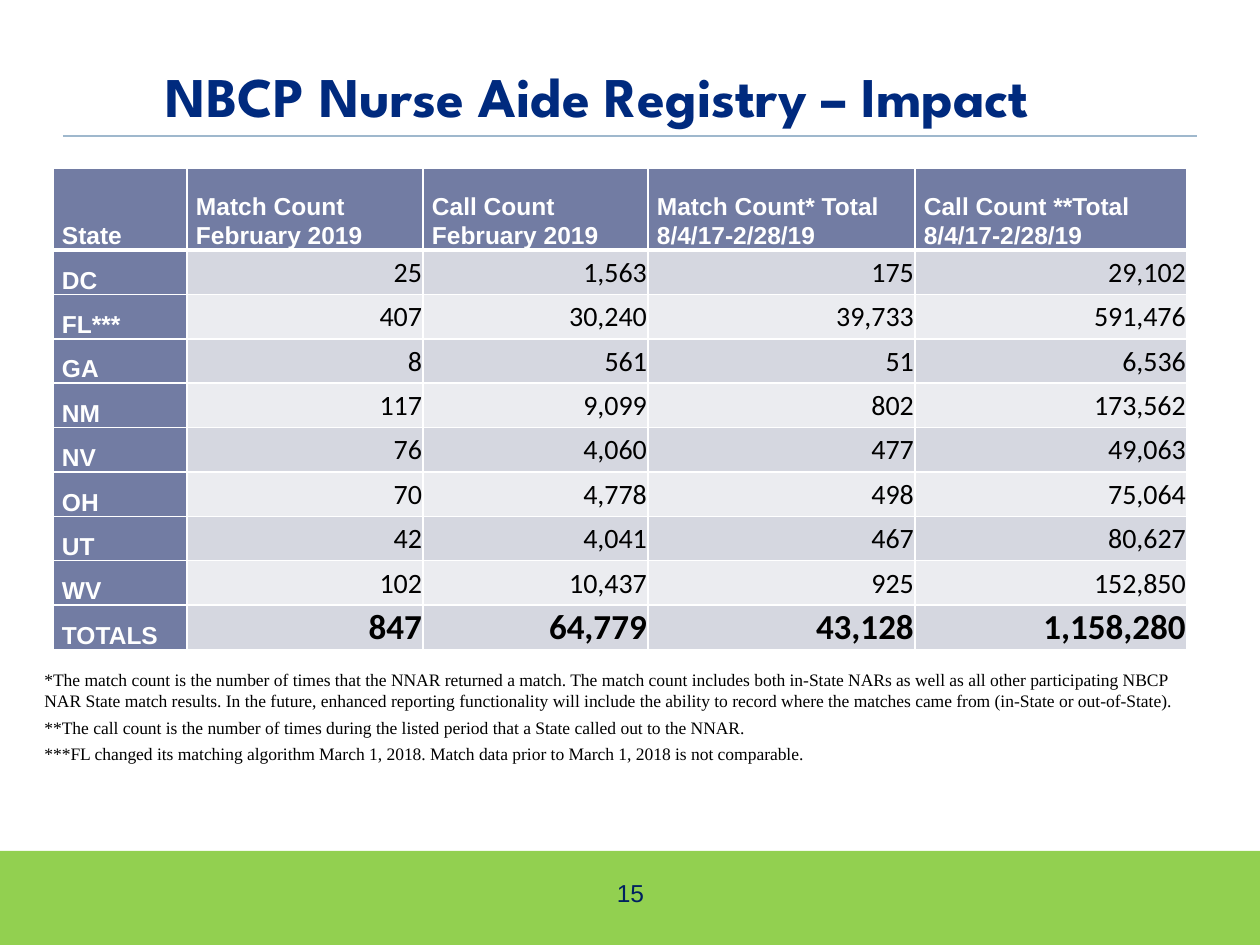
from lxml.etree import SubElement
from pptx import Presentation
from pptx.dml.color import RGBColor
from pptx.enum.shapes import MSO_CONNECTOR, MSO_SHAPE
from pptx.enum.text import MSO_ANCHOR as Anchor, PP_ALIGN as Align
from pptx.oxml.ns import qn
from pptx.util import Emu, Pt

PX = 914400 // 126

TITLE = "NBCP Nurse Aide Registry – Impact"
PAGE_NUMBER = "15"
HEADERS = ["State", "Match Count February 2019", "Call Count February 2019",
           "Match Count* Total 8/4/17-2/28/19", "Call Count **Total 8/4/17-2/28/19"]
STATES = [
    ("DC", "25", "1,563", "175", "29,102"),
    ("FL***", "407", "30,240", "39,733", "591,476"),
    ("GA", "8", "561", "51", "6,536"),
    ("NM", "117", "9,099", "802", "173,562"),
    ("NV", "76", "4,060", "477", "49,063"),
    ("OH", "70", "4,778", "498", "75,064"),
    ("UT", "42", "4,041", "467", "80,627"),
    ("WV", "102", "10,437", "925", "152,850"),
    ("TOTALS", "847", "64,779", "43,128", "1,158,280"),
]
FOOTNOTES = [
    "*The match count is the number of times that the NNAR returned a match. "
    "The match count includes both in-State NARs as well as all other participating "
    "NBCP NAR State match results. In the future, enhanced reporting functionality "
    "will include the ability to record where the matches came from "
    "(in-State or out-of-State).",
    "**The call count is the number of times during the listed period "
    "that a State called out to the NNAR.",
    "***FL changed its matching algorithm March 1, 2018. "
    "Match data prior to March 1, 2018 is not comparable.",
]

TABLE_LEFT, TABLE_TOP, TABLE_HEIGHT = 53, 168, 482
HEADER_HEIGHT = 82
COLUMN_WIDTHS = [134, 236, 225, 267, 272]
LABEL_FILL, BAND_FILLS = "727CA3", ("D5D7E0", "EBECF0")
WHITE, BLACK = "FFFFFF", "000000"


def px(count):
    return Emu(round(count * PX))


def color(value):
    return RGBColor.from_string(value)


def add_run(para, text, font, size, ink, bold=False):
    span = para.add_run()
    span.text = text
    span.font.name, span.font.size, span.font.bold = font, Pt(size), bold
    span.font.color.rgb = color(ink)


def add_text(slide, place, texts, font, size, ink, bold=False, align=Align.LEFT,
             anchor=Anchor.TOP, space_after=0):
    box = slide.shapes.add_textbox(*map(px, place))
    frame = box.text_frame
    frame.word_wrap = True
    frame.vertical_anchor = anchor
    for index, text in enumerate(texts):
        para = frame.add_paragraph() if index else frame.paragraphs[0]
        para.alignment = align
        para.space_after = Pt(space_after)
        add_run(para, text, font, size, ink, bold)


def set_borders(cell, top, bottom):
    """Give the cell white borders; top and bottom are widths in points."""
    properties = cell._tc.get_or_add_tcPr()
    for side, width in (("L", 1), ("R", 1), ("T", top), ("B", bottom)):
        line = SubElement(properties, qn(f"a:ln{side}"), w=str(Pt(width)))
        SubElement(SubElement(line, qn("a:solidFill")), qn("a:srgbClr"), val=WHITE)


def fill_cell(cell, text, row, column):
    is_label = row == 0 or column == 0
    set_borders(cell, top=3 if row == 1 else 1, bottom=3 if row == 0 else 1)
    cell.fill.solid()
    cell.fill.fore_color.rgb = color(LABEL_FILL if is_label else BAND_FILLS[(row - 1) % 2])
    cell.margin_left = cell.margin_right = px(9 if is_label else 1)
    cell.margin_top, cell.margin_bottom = px(0 if is_label else 1), 0
    cell.vertical_anchor = Anchor.BOTTOM if is_label else Anchor.MIDDLE
    para = cell.text_frame.paragraphs[0]
    if is_label:
        para.line_spacing = 1.07
        add_run(para, text, "Arial", 14, WHITE, bold=True)
    else:
        is_total = row == len(STATES)
        para.alignment = Align.RIGHT
        add_run(para, text, "Calibri", 20 if is_total else 16, BLACK, bold=is_total)


def add_registry_table(slide):
    rows = [HEADERS, *STATES]
    table = slide.shapes.add_table(
        len(rows), len(HEADERS), px(TABLE_LEFT), px(TABLE_TOP),
        px(sum(COLUMN_WIDTHS)), px(TABLE_HEIGHT)).table
    for column, width in zip(table.columns, COLUMN_WIDTHS):
        column.width = px(width)
    state_height = (TABLE_HEIGHT - HEADER_HEIGHT) / len(STATES)
    for row, texts in enumerate(rows):
        table.rows[row].height = px(state_height if row else HEADER_HEIGHT)
        for column, text in enumerate(texts):
            fill_cell(table.cell(row, column), text, row, column)


def add_footer_band(slide):
    band = slide.shapes.add_shape(MSO_SHAPE.RECTANGLE, *map(px, (0, 851, 1260, 94)))
    band.shadow.inherit = False
    band.fill.solid()
    band.fill.fore_color.rgb = color("92D050")
    band.line.fill.background()


def add_title_rule(slide):
    rule = slide.shapes.add_connector(MSO_CONNECTOR.STRAIGHT, *map(px, (63, 136, 1197, 136)))
    rule.line.color.rgb = color("9FB8CD")
    rule.line.width = Pt(1.25)
    SubElement(rule._element.spPr, qn("a:effectLst"))


def main():
    deck = Presentation()
    deck.slide_width, deck.slide_height = px(1260), px(945)
    slide = deck.slides.add_slide(deck.slide_layouts[6])
    add_footer_band(slide)
    add_title_rule(slide)
    add_text(slide, (-32, 40, 1260, 95), [TITLE], "League Spartan", 32, "002A7E",
             bold=True, align=Align.CENTER, anchor=Anchor.BOTTOM, space_after=6)
    add_registry_table(slide)
    add_text(slide, (599, 872, 63, 50), [PAGE_NUMBER], "Arial", 14, "002060",
             align=Align.CENTER)
    add_text(slide, (32, 663, 1155, 130), FOOTNOTES, "Times New Roman", 10, BLACK,
             space_after=3)
    deck.save("out.pptx")


if __name__ == "__main__":
    main()
